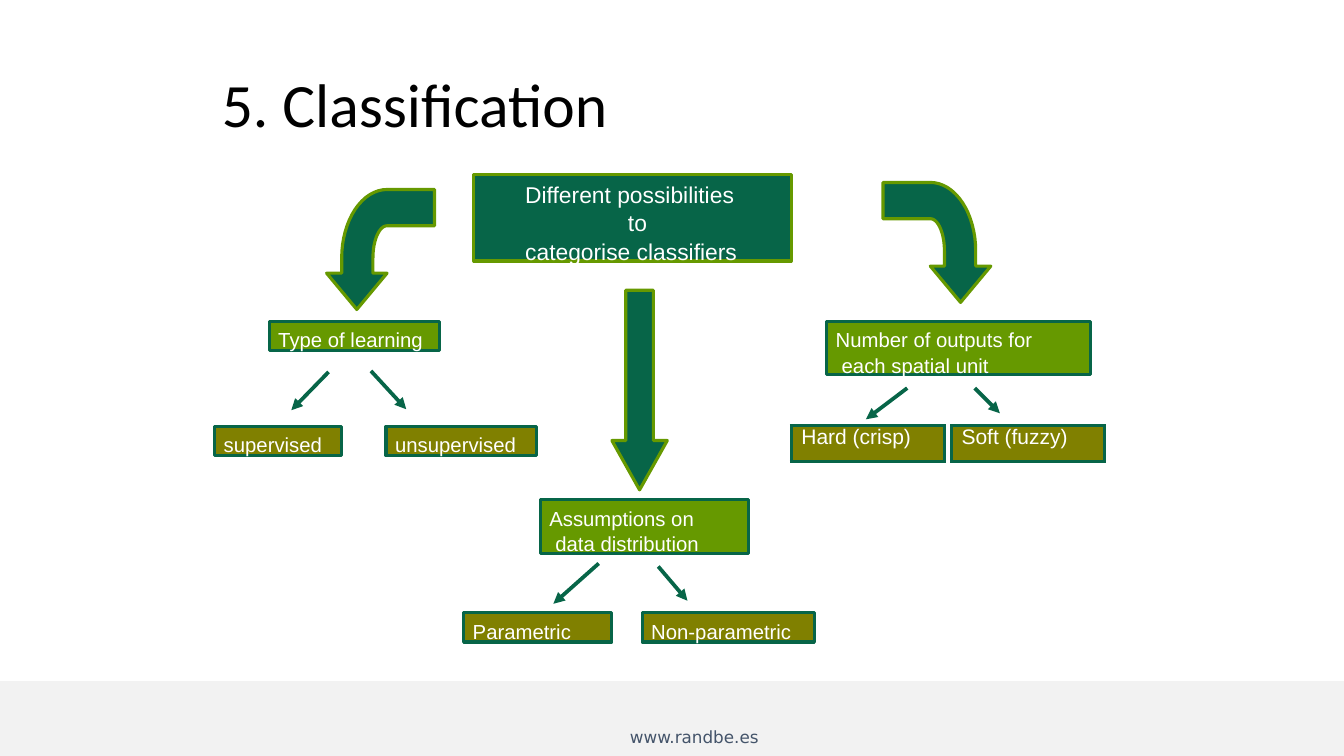
from dataclasses import dataclass
from math import cos, pi, sin

from lxml.etree import SubElement as Sub
from pptx import Presentation
from pptx.dml.color import RGBColor as Color
from pptx.enum.shapes import MSO_CONNECTOR as Link, MSO_SHAPE as Kind
from pptx.enum.text import MSO_ANCHOR as Anchor, MSO_AUTO_SIZE as Fit
from pptx.oxml.ns import qn
from pptx.util import Emu, Inches, Pt

PINE = Color(0x07, 0x65, 0x48)
LEAF = Color(0x66, 0x99, 0x00)
OLIVE = Color(0x80, 0x80, 0x00)
WHITE = Color(0xFF, 0xFF, 0xFF)
BLACK = Color(0x00, 0x00, 0x00)
PALE = Color(0xF2, 0xF2, 0xF2)
SLATE = Color(0x44, 0x54, 0x6A)

# The grid has ten columns and ten rows to the inch
CELL = Inches(0.1)
COLS, ROWS = 133.33, 75
EDGE = 2.25


@dataclass(frozen=True)
class Para:
    lines: tuple[str, ...]
    left: float = 0.9
    shift: float = 0  # further indent of the lines after the first


@dataclass(frozen=True)
class Box:
    x: float
    y: float
    w: float
    h: float
    fill: Color
    edge: Color
    paras: tuple[Para, ...]
    size: float = 14.5


@dataclass(frozen=True)
class Arrow:
    x1: float
    y1: float
    x2: float
    y2: float


def topic(x: float, y: float, w: float, h: float, *lines: str) -> Box:
    return Box(x, y, w, h, LEAF, PINE, (Para(lines, shift=0.6 if len(lines) > 1 else 0),))


def leaf(x: float, y: float, w: float, text: str) -> Box:
    return Box(x, y, w, 2.9, OLIVE, PINE, (Para((text,)),))


BOXES = (
    Box(47, 17.3, 31.5, 8.6, PINE, LEAF, (
        Para(("Different possibilities", "to"), 5.1, 10.2),
        Para(("categorise classifiers",), 5.1)), 16.3),
    topic(26.7, 31.9, 16.9, 2.9, "Type of learning"),
    topic(53.6, 49.6, 20.7, 5.3, "Assumptions on", "data distribution"),
    topic(82, 31.9, 26.2, 5.3, "Number of outputs for", "each spatial unit"),
    leaf(21.3, 42.3, 12.6, "supervised"),
    leaf(38.3, 42.3, 14.9, "unsupervised"),
    leaf(46, 60.8, 14.7, "Parametric"),
    leaf(63.7, 60.8, 17.1, "Non-parametric"),
)

ARROWS = (
    Arrow(32.6, 36.9, 28.9, 40.7), Arrow(36.8, 36.8, 40.3, 40.6),
    Arrow(59.4, 55.9, 54.9, 59.9), Arrow(65.3, 56.2, 68.2, 59.6),
    Arrow(90, 38.5, 85.9, 41.6), Arrow(96.7, 38.5, 99.2, 41),
)


def grid(value: float) -> Emu:
    return Emu(round(value * CELL))


def place(x: float, y: float, w: float, h: float) -> tuple[Emu, ...]:
    return grid(x), grid(y), grid(w), grid(h)


def paint(shape, fill: Color, edge: Color, width: float = EDGE) -> None:
    shape.shadow.inherit = False
    shape.fill.solid()
    shape.fill.fore_color.rgb = fill
    shape.line.color.rgb = edge
    shape.line.width = Pt(width)


def write(para, text: str, size: float, color: Color, face: str = "Arial") -> None:
    run = para.add_run()
    run.text = text
    run.font.size = Pt(size)
    run.font.name = face
    run.font.color.rgb = color


def pad(frame, left: float = 0, top: float = 0) -> None:
    frame.margin_left, frame.margin_top = grid(left), grid(top)
    frame.margin_right = frame.margin_bottom = 0


def draw_box(shapes, box: Box) -> None:
    shape = shapes.add_shape(Kind.RECTANGLE, *place(box.x, box.y, box.w, box.h))
    paint(shape, box.fill, box.edge)
    frame = shape.text_frame
    frame.word_wrap = True
    frame.vertical_anchor = Anchor.TOP
    pad(frame, top=0.5)
    for i, item in enumerate(box.paras):
        para = frame.add_paragraph() if i else frame.paragraphs[0]
        props = para._p.get_or_add_pPr()
        props.set("marL", str(grid(item.left + item.shift)))
        props.set("indent", str(grid(-item.shift)))
        props.set("algn", "l")
        para.line_spacing = 1.04
        for j, line in enumerate(item.lines):
            if j:
                para.add_line_break()
            write(para, line, box.size, WHITE)


def draw_arrow(shapes, arrow: Arrow) -> None:
    ends = map(grid, (arrow.x1, arrow.y1, arrow.x2, arrow.y2))
    line = shapes.add_connector(Link.STRAIGHT, *ends)
    line.line.color.rgb = PINE
    line.line.width = Pt(2.7)
    Sub(line.line._get_or_add_ln(), qn("a:tailEnd"), type="triangle")
    Sub(line._element.spPr, qn("a:effectLst"))


def arc(rx: float, ry: float, steps: int = 16) -> list[tuple[float, float]]:
    """Quarter turn from the left of the bend up to its top."""
    turns = [pi / 2 * i / steps for i in range(steps + 1)]
    return [(6 - rx * cos(t), 6.8 - ry * sin(t)) for t in turns]


def draw_bend(shapes, x: float, y: float, flip: bool) -> None:
    wide = 10.7
    dots = [(3, 11.9), (0, 8.3), (1.5, 8.3), *arc(4.5, 6.8), (wide, 0), (wide, 3.6),
            *reversed(arc(1.4, 3.2)), (4.6, 8.3), (6, 8.3)]
    spots = [(grid(x + (wide - a if flip else a)), grid(y + b)) for a, b in dots]
    build = shapes.build_freeform(*spots[0])
    build.add_line_segments(spots[1:], close=True)
    paint(build.convert_to_shape(), PINE, LEAF)


def draw_table(shapes) -> None:
    table = shapes.add_table(1, 3, *place(78.5, 42.2, 31.1, 3.6)).table
    table.first_row = table.horz_banding = False
    table.rows[0].height = grid(3.6)
    for i, (wide, text) in enumerate(((15.2, "Hard (crisp)"), (0.7, ""), (15.2, "Soft (fuzzy)"))):
        table.columns[i].width = grid(wide)
        cell = table.cell(0, i)
        pad(cell, left=1 if text else 0)
        if not text:
            cell.fill.background()
            continue
        props = cell._tc.get_or_add_tcPr()
        for side in "LRTB":
            edge = Sub(props, qn(f"a:ln{side}"), w=str(Pt(EDGE)))
            Sub(Sub(edge, qn("a:solidFill")), qn("a:srgbClr"), val=str(PINE))
        cell.fill.solid()
        cell.fill.fore_color.rgb = OLIVE
        write(cell.text_frame.paragraphs[0], text, 15, WHITE)


def main() -> None:
    deck = Presentation()
    deck.slide_width, deck.slide_height = grid(COLS), grid(ROWS)
    slide = deck.slides.add_slide(deck.slide_layouts[5])
    shapes = slide.shapes

    # Footer
    bar = shapes.add_shape(Kind.RECTANGLE, *place(0, 67.6, COLS, 7.4))
    paint(bar, PALE, PALE, 1)
    site = shapes.add_textbox(*place(61.5, 71.6, 17.2, 3)).text_frame
    site.word_wrap = True
    write(site.paragraphs[0], "www.randbe.es", 12, SLATE, "DejaVu Sans")

    # Title
    title = shapes.title
    title.left, title.top, title.width, title.height = place(21.9, 6.5, 104.4, 7.4)
    frame = title.text_frame
    frame.auto_size = Fit.NONE
    frame.vertical_anchor = Anchor.MIDDLE
    pad(frame, left=0.1)
    head = frame.paragraphs[0]
    head._p.get_or_add_pPr().set("algn", "l")
    write(head, "5. Classification", 44, BLACK, "Calibri")

    # Boxes and the table of outputs
    for box in BOXES:
        draw_box(shapes, box)
    draw_table(shapes)

    # Block arrows from the main box
    draw_bend(shapes, 32.4, 18.8, flip=False)
    draw_bend(shapes, 87.6, 18.1, flip=True)
    down = shapes.add_shape(Kind.DOWN_ARROW, *place(60.7, 28.8, 5.5, 19.8))
    down.adjustments[0], down.adjustments[1] = 0.5, 0.89
    paint(down, PINE, LEAF)

    # Thin arrows to the leaves
    for arrow in ARROWS:
        draw_arrow(shapes, arrow)

    deck.save("out.pptx")


if __name__ == "__main__":
    main()
